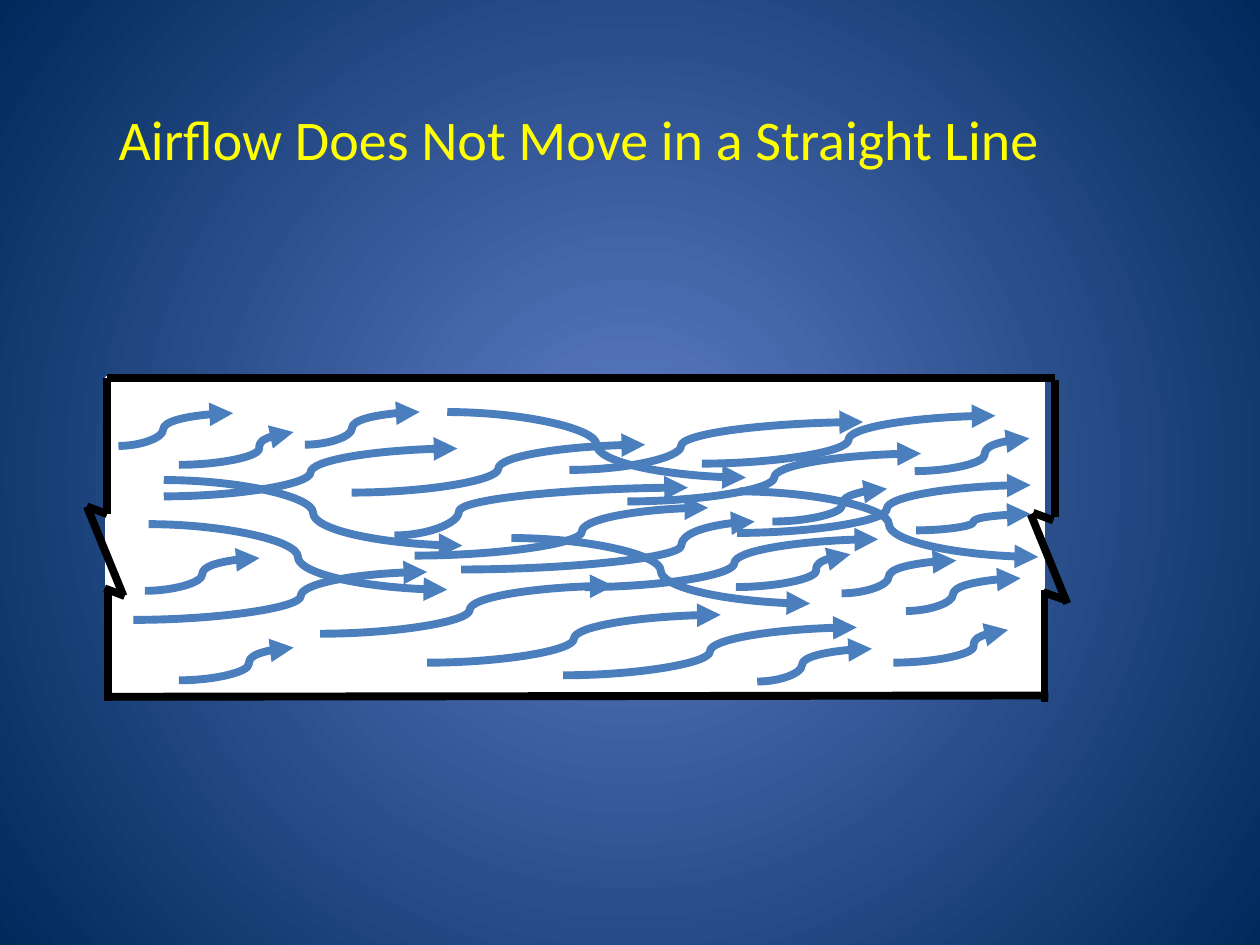
from dataclasses import dataclass
from typing import NamedTuple

from lxml.etree import SubElement
from pptx import Presentation
from pptx.dml.color import RGBColor
from pptx.enum.shapes import MSO_CONNECTOR as Link, MSO_SHAPE as Preset
from pptx.enum.text import MSO_ANCHOR as Anchor, MSO_AUTO_SIZE as AutoSize, PP_ALIGN as Align
from pptx.oxml.ns import qn
from pptx.shapes.connector import Connector
from pptx.slide import Slide
from pptx.util import Inches, Pt


@dataclass(frozen=True)
class Theme:
    center: RGBColor = RGBColor(0x5E, 0x7C, 0xC5)
    edge: RGBColor = RGBColor(0x00, 0x29, 0x5C)
    title: RGBColor = RGBColor(0xFF, 0xFF, 0x00)
    duct: RGBColor = RGBColor(0xFF, 0xFF, 0xFF)
    wall: RGBColor = RGBColor(0x00, 0x00, 0x00)
    air: RGBColor = RGBColor(0x4B, 0x7E, 0xBC)
    font: str = "Calibri"
    title_size: Pt = Pt(32)
    stroke: Pt = Pt(4.5)
    duct_stroke: Pt = Pt(2)


class Wall(NamedTuple):
    x1: float
    y1: float
    x2: float
    y2: float


class Start(NamedTuple):
    x: float
    y: float
    bend: float = 0.5


class Current(NamedTuple):
    run: float
    rise: float
    starts: tuple[Start, ...]


THEME = Theme()

WALLS = (
    Wall(0.85, 3, 8.37, 3),
    Wall(0.86, 5.53, 8.32, 5.52),
    Wall(0.85, 4.08, 0.85, 3),
    Wall(0.86, 5.56, 0.86, 4.67),
    Wall(0.98, 4.73, 0.69, 4.02),
    Wall(0.85, 4.08, 0.69, 4.02),
    Wall(0.99, 4.73, 0.83, 4.67),
    Wall(8.37, 4.1, 8.37, 3.02),
    Wall(8.29, 5.57, 8.29, 4.68),
    Wall(8.47, 4.79, 8.18, 4.08),
    Wall(8.45, 4.76, 8.28, 4.7),
    Wall(8.36, 4.13, 8.2, 4.07),
)

CURRENTS = (
    Current(2.37, 0.52, (
        Start(1.18, 4.16), Start(1.3, 3.81), Start(3.55, 3.27),
        Start(4.06, 4.27), Start(5.87, 3.9),
    )),
    Current(2.33, -0.38, (
        Start(1.3, 3.94), Start(2.79, 3.91), Start(3.66, 4.52, 0.75),
        Start(3.13, 4.25, 0.22), Start(3.29, 4.41, 0.57), Start(1.06, 4.92, 0.57),
        Start(2.54, 5.03, 0.51), Start(3.39, 5.26), Start(4.52, 3.73, 0.38),
        Start(4.98, 3.98), Start(4.64, 4.66, 0.51), Start(5.57, 3.68),
        Start(4.47, 5.36), Start(5.85, 4.23, 0.51),
    )),
    Current(0.91, -0.26, (
        Start(1.15, 4.69), Start(0.94, 3.54, 0.39), Start(1.42, 3.69, 0.7),
        Start(1.42, 5.4, 0.61), Start(6.13, 4.14, 0.61), Start(7.09, 5.26, 0.7),
        Start(6.01, 5.41, 0.39), Start(2.42, 3.53, 0.41), Start(6.68, 4.71, 0.41),
        Start(5.84, 4.66, 0.7), Start(7.19, 4.85, 0.41), Start(7.26, 3.74, 0.61),
    )),
    Current(0.91, -0.13, (Start(7.27, 4.21),)),
)


def paint_background(page: Slide) -> None:
    fill = page.background.fill
    fill.gradient()
    for stop, color in zip(fill.gradient_stops, (THEME.center, THEME.edge)):
        stop.color.rgb = color
    gradient = page.background._cSld.find(".//" + qn("a:gradFill"))
    gradient.remove(gradient.find(qn("a:lin")))
    circle = SubElement(gradient, qn("a:path"), {"path": "circle"})
    sides = {side: "50000" for side in "ltrb"}
    SubElement(circle, qn("a:fillToRect"), sides)


def write_title(page: Slide, text: str) -> None:
    box = page.shapes.title
    box.left, box.top, box.width, box.height = map(Inches, (0.82, 0.78, 7.55, 0.64))
    frame = box.text_frame
    frame.word_wrap = False
    frame.auto_size = AutoSize.SHAPE_TO_FIT_TEXT
    frame.vertical_anchor = Anchor.TOP
    para = frame.paragraphs[0]
    para.alignment = Align.CENTER
    span = para.add_run()
    span.text = text
    span.font.name = THEME.font
    span.font.size = THEME.title_size
    span.font.color.rgb = THEME.title


def draw_duct(page: Slide) -> None:
    duct = page.shapes.add_shape(Preset.RECTANGLE, *map(Inches, (0.85, 3, 7.43, 2.52)))
    duct.shadow.inherit = False
    duct.fill.solid()
    duct.fill.fore_color.rgb = THEME.duct
    duct.line.color.rgb = THEME.duct
    duct.line.width = THEME.duct_stroke


def draw_link(page: Slide, kind: Link, ends: Wall, color: RGBColor) -> Connector:
    link = page.shapes.add_connector(kind, *map(Inches, ends))
    link.line.color.rgb = color
    link.line.width = THEME.stroke
    SubElement(link._element.spPr, qn("a:effectLst"))
    return link


def draw_current(page: Slide, current: Current, start: Start) -> None:
    ends = Wall(start.x, start.y, start.x + current.run, start.y + current.rise)
    link = draw_link(page, Link.CURVE, ends, THEME.air)
    properties = link._element.spPr
    SubElement(properties.find(qn("a:ln")), qn("a:tailEnd"), {"type": "triangle"})
    guides = properties.find(".//" + qn("a:avLst"))
    formula = f"val {round(start.bend * 100000)}"
    SubElement(guides, qn("a:gd"), {"name": "adj1", "fmla": formula})


def main() -> None:
    deck = Presentation()
    deck.slide_width, deck.slide_height = Inches(10), Inches(7.5)
    page = deck.slides.add_slide(deck.slide_layouts.get_by_name("Title Only"))
    paint_background(page)
    write_title(page, "Airflow Does Not Move in a Straight Line")
    draw_duct(page)
    for wall in WALLS:
        draw_link(page, Link.STRAIGHT, wall, THEME.wall)
    for current in CURRENTS:
        for start in current.starts:
            draw_current(page, current, start)
    deck.save("out.pptx")


if __name__ == "__main__":
    main()
